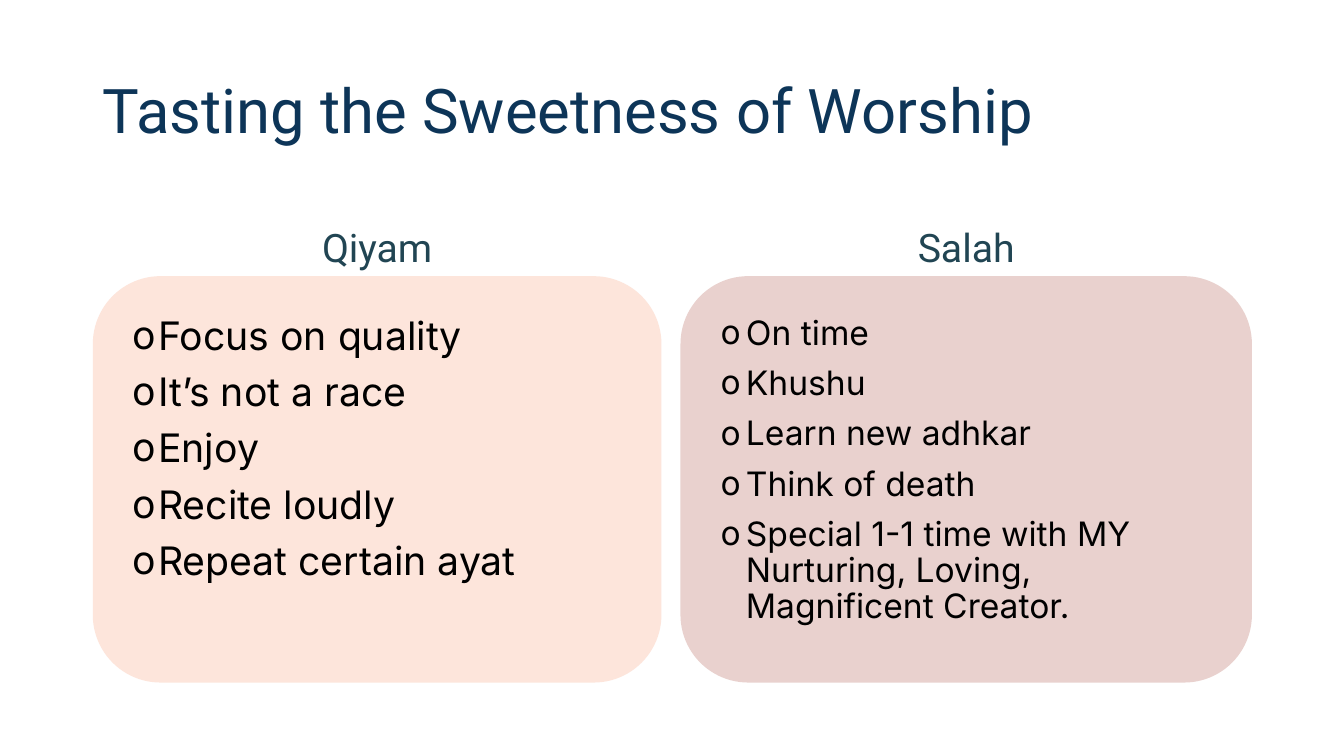
from dataclasses import dataclass

from lxml.etree import SubElement
from pptx import Presentation
from pptx.dml.color import RGBColor
from pptx.enum.text import MSO_ANCHOR, MSO_AUTO_SIZE, PP_ALIGN
from pptx.oxml.ns import qn
from pptx.shapes.placeholder import SlidePlaceholder
from pptx.util import Cm, Pt

COLORS = {
    "title": "0D3558",
    "heading": "214553",
    "body": "000000",
    "peach": "FDE5DB",
    "rose": "E9D1CE",
}
COMPARISON_LAYOUT = 4
MARGIN = 2.34
HEADING_TOP, HEADING_HEIGHT = 4.67, 2.29
CARD_TOP, CARD_HEIGHT = HEADING_TOP + HEADING_HEIGHT, 10.24
INDENT = Cm(0.64)


@dataclass(frozen=True)
class Column:
    """One headed card with its bullet points."""

    heading: str
    points: list[str]
    left: float
    width: float
    fill: str
    size: int


COLUMNS = [
    Column(
        "Qiyam",
        ["Focus on quality", "It’s not a race", "Enjoy", "Recite loudly", "Repeat certain ayat"],
        MARGIN, 14.33, "peach", 28,
    ),
    Column(
        "Salah",
        [
            "On time",
            "Khushu",
            "Learn new adhkar",
            "Think of death",
            "Special 1-1 time with MY Nurturing, Loving, Magnificent Creator.",
        ],
        17.15, 14.4, "rose", 24,
    ),
]


def place(box: SlidePlaceholder, left: float, top: float, width: float, height: float) -> None:
    """Move and size a placeholder, in centimetres."""
    box.left, box.top, box.width, box.height = Cm(left), Cm(top), Cm(width), Cm(height)


def round_card(box: SlidePlaceholder, fill: str) -> None:
    """Turn a placeholder into a filled rounded card with even insets."""
    geometry = SubElement(box._element.spPr, qn("a:prstGeom"), prst="roundRect")
    SubElement(geometry, qn("a:avLst"))
    box.fill.solid()
    box.fill.fore_color.rgb = RGBColor.from_string(COLORS[fill])
    frame = box.text_frame
    frame.margin_left = frame.margin_right = Cm(0.51)
    frame.margin_top = frame.margin_bottom = Cm(0.51)


def write(
    box: SlidePlaceholder,
    lines: list[str],
    *,
    font: str,
    size: int,
    color: str,
    align: PP_ALIGN = PP_ALIGN.LEFT,
    anchor: MSO_ANCHOR = MSO_ANCHOR.TOP,
    bullet: str = "",
) -> None:
    """Fill a placeholder with formatted paragraphs."""
    frame = box.text_frame
    frame.word_wrap = True
    frame.auto_size = MSO_AUTO_SIZE.NONE
    frame.vertical_anchor = anchor
    for index, line in enumerate(lines):
        para = frame.add_paragraph() if index else frame.paragraphs[0]
        if bullet:
            properties = para._p.get_or_add_pPr()
            properties.set("marL", str(INDENT))
            properties.set("indent", str(-INDENT))
            SubElement(properties, qn("a:buFont"), typeface=font)
            SubElement(properties, qn("a:buChar"), char=bullet)
        para.alignment = align
        para.line_spacing = 0.9
        para.space_before = Pt(10 if index else 0)
        span = para.add_run()
        span.text = line
        span.font.name = font
        span.font.size = Pt(size)
        span.font.bold = False
        span.font.color.rgb = RGBColor.from_string(COLORS[color])


def main() -> None:
    """Build and save the slide."""
    deck = Presentation()
    deck.slide_width, deck.slide_height = Cm(33.87), Cm(19.05)
    page = deck.slides.add_slide(deck.slide_layouts[COMPARISON_LAYOUT])
    title, *boxes = page.placeholders

    place(title, MARGIN, 1.02, 29.21, 3.68)
    write(title, ["Tasting the Sweetness of Worship"], font="Roboto", size=44,
          color="title", anchor=MSO_ANCHOR.MIDDLE)

    for column, heading, card in zip(COLUMNS, boxes[::2], boxes[1::2]):
        place(heading, column.left, HEADING_TOP, column.width, HEADING_HEIGHT)
        write(heading, [column.heading], font="Roboto", size=28, color="heading",
              align=PP_ALIGN.CENTER, anchor=MSO_ANCHOR.BOTTOM)
        place(card, column.left, CARD_TOP, column.width, CARD_HEIGHT)
        round_card(card, column.fill)
        write(card, column.points, font="Inter", size=column.size, color="body", bullet="o")

    deck.save("out.pptx")


if __name__ == "__main__":
    main()
